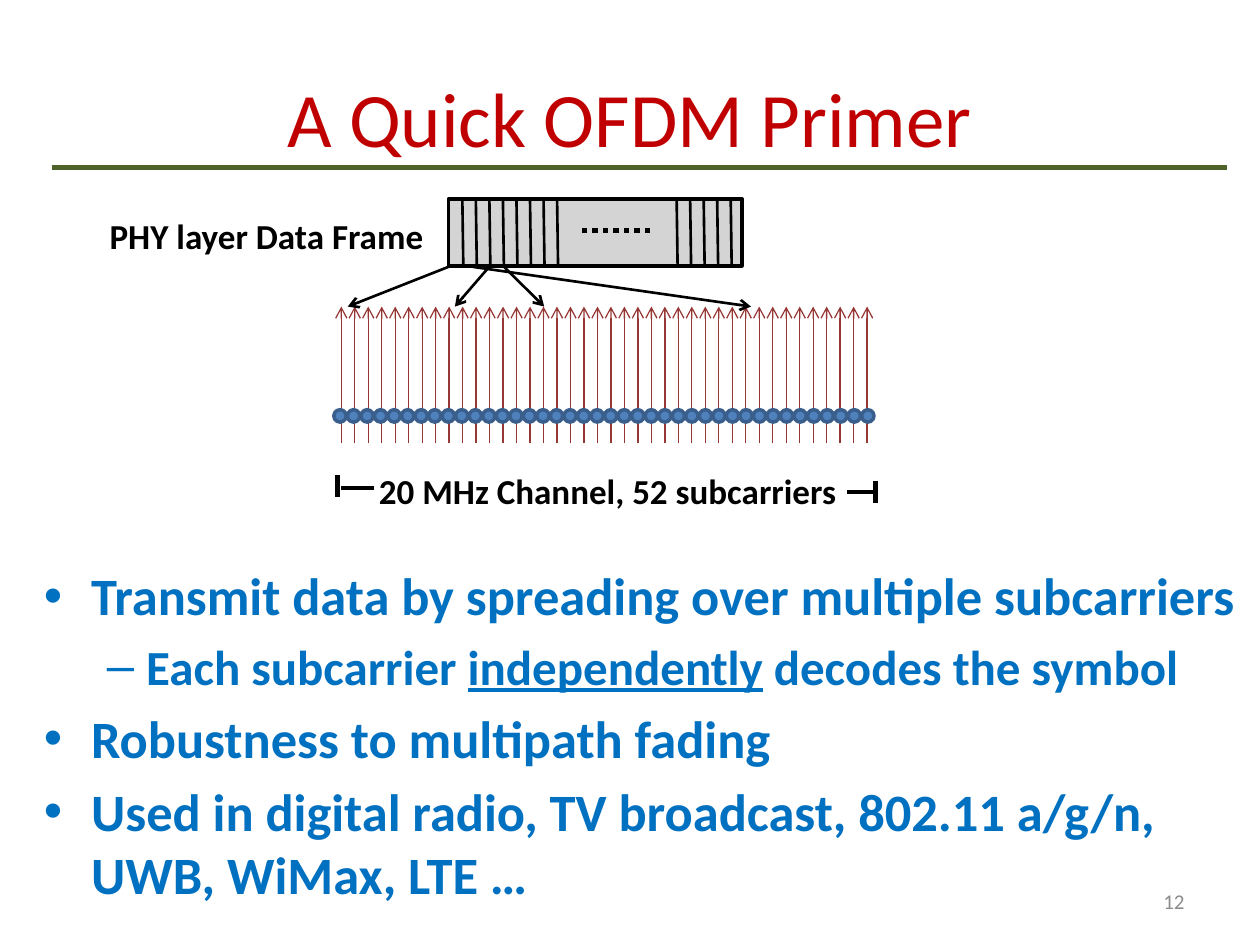
from lxml import etree
from pptx import Presentation
from pptx.dml.color import RGBColor
from pptx.enum.dml import MSO_LINE
from pptx.enum.shapes import MSO_CONNECTOR, MSO_SHAPE
from pptx.enum.text import MSO_ANCHOR, MSO_AUTO_SIZE, PP_ALIGN
from pptx.oxml.ns import qn
from pptx.util import Cm, Pt

STRAIGHT = MSO_CONNECTOR.STRAIGHT
RECTANGLE, OVAL = MSO_SHAPE.RECTANGLE, MSO_SHAPE.OVAL
DOTTED = MSO_LINE.ROUND_DOT
MIDDLE, NO_FIT = MSO_ANCHOR.MIDDLE, MSO_AUTO_SIZE.NONE
LEFT, CENTER, RIGHT = PP_ALIGN.LEFT, PP_ALIGN.CENTER, PP_ALIGN.RIGHT

BLACK = RGBColor(0x00, 0x00, 0x00)
RED = RGBColor(0xC0, 0x00, 0x00)
BLUE = RGBColor(0x00, 0x70, 0xC0)
OLIVE = RGBColor(0x4F, 0x62, 0x28)
MAROON = RGBColor(0x95, 0x37, 0x35)
DOT_FILL = RGBColor(0x4F, 0x81, 0xBD)
DOT_EDGE = RGBColor(0x3A, 0x5F, 0x8C)
SILVER = RGBColor(0xBF, 0xBF, 0xBF)
GRAY = RGBColor(0x8C, 0x8C, 0x8C)
FONT = "Calibri"

# Content; all positions are in centimetres
TITLE = "A Quick OFDM Primer"
TITLE_AREA = (1.27, 0.76, 22.86, 3.18)
BODY_AREA = (0.63, 11.23, 24.56, 6.99)
BULLETS = [  # level, size, spans of (text, underlined)
    (0, 30, [("Transmit data by spreading over multiple subcarriers", False)]),
    (1, 28, [("Each subcarrier ", False), ("independently", True),
             (" decodes the symbol", False)]),
    (0, 30, [("Robustness to multipath fading", False)]),
    (0, 30, [("Used in digital radio, TV broadcast, 802.11 a/g/n, "
              "UWB, WiMax, LTE …", False)]),
]
LABEL_STYLE = {"size": Pt(20), "bold": True}
LABELS = [  # text, area, font colour, alignment, format
    ("20 MHz Channel, 52 subcarriers", (7.39, 9.32, 10.77, 1.12), BLACK, LEFT, LABEL_STYLE),
    ("PHY layer Data Frame", (1.96, 4.19, 7.19, 1.12), BLACK, LEFT, LABEL_STYLE),
    ("12", (18.21, 17.65, 5.92, 1.02), GRAY, RIGHT, {"size": Pt(12)}),
]
TITLE_RULE = (1.04, 3.38, 24.74, 3.38)
CHANNEL_MARKS = [  # line, width
    ((17.07, 9.91, 17.63, 9.91), 2.25),
    ((6.88, 9.83, 7.54, 9.83), 2.25),
    ((17.65, 9.70, 17.65, 10.13), 3),
    ((6.81, 9.58, 6.81, 10.01), 3),
]
FRAME_AREA = (9.04, 4.01, 5.92, 1.35)
FRAME_TOP, FRAME_BOTTOM = 4.01, 5.38
SYMBOL_DIVIDERS = [(9.32, 11.23, 8), (13.64, 14.73, 5)]  # first, last, count
ELLIPSIS = (11.73, 4.65, 13.16, 4.65)
SUBCARRIERS = 40
CARRIER_FIRST, CARRIER_LAST = 6.88, 17.48
CARRIER_TOP, CARRIER_BOTTOM = 6.18, 8.94
DOT_FIRST, DOT_LAST = 6.73, 17.37
DOT_TOP, DOT_SIZE = 8.26, 0.25
SPREADING = [(9.04, 7.01), (9.53, 15.14), (9.86, 9.17), (10.16, 10.97)]  # start x, end x


def spaced(first, last, count):
    step = (last - first) / (count - 1)
    return [first + step * i for i in range(count)]


def place(shape, area):
    shape.left, shape.top, shape.width, shape.height = map(Cm, area)


def add_line(page, ends, color, width, arrow=False, dash=None):
    line = page.shapes.add_connector(STRAIGHT, *map(Cm, ends))
    line.line.color.rgb = color
    line.line.width = Pt(width)
    if dash:
        line.line.dash_style = dash
    if arrow:
        etree.SubElement(line.line._get_or_add_ln(), qn("a:tailEnd"), type="arrow")
    etree.SubElement(line._element.spPr, qn("a:effectLst"))


def add_filled(page, kind, area, fill, edge):
    shape = page.shapes.add_shape(kind, *map(Cm, area))
    shape.shadow.inherit = False
    shape.fill.solid()
    shape.fill.fore_color.rgb = fill
    shape.line.color.rgb = edge
    shape.line.width = Pt(2)
    return shape


def add_span(para, text, color, style):
    span = para.add_run()
    span.text = text
    span.font.name = FONT
    span.font.color.rgb = color
    for name, value in style.items():
        setattr(span.font, name, value)


def add_label(page, text, area, color, align, style):
    box = page.shapes.add_textbox(*map(Cm, area))
    box.text_frame.word_wrap = True
    box.text_frame.vertical_anchor = MIDDLE
    para = box.text_frame.paragraphs[0]
    para.alignment = align
    add_span(para, text, color, style)


def fill_placeholders(page):
    title, body = page.placeholders
    place(title, TITLE_AREA)
    title.text_frame.auto_size = NO_FIT
    title.text_frame.vertical_anchor = MIDDLE
    heading = title.text_frame.paragraphs[0]
    heading.alignment = CENTER
    add_span(heading, TITLE, RED, {"size": Pt(44)})

    place(body, BODY_AREA)
    body.text_frame.auto_size = NO_FIT
    for i, (level, size, spans) in enumerate(BULLETS):
        para = body.text_frame.add_paragraph() if i else body.text_frame.paragraphs[0]
        para.level = level
        for text, underlined in spans:
            add_span(para, text, BLUE,
                     {"size": Pt(size), "bold": True, "underline": underlined})


def draw_data_frame(page):
    frame = add_filled(page, RECTANGLE, FRAME_AREA, SILVER, BLACK)
    shade = frame._element.spPr.find(qn("a:solidFill"))[0]
    etree.SubElement(shade, qn("a:alpha"), val="67000")
    for group in SYMBOL_DIVIDERS:
        for x in spaced(*group):
            add_line(page, (x, FRAME_TOP, x + 0.02, FRAME_BOTTOM), BLACK, 1.5)
    add_line(page, ELLIPSIS, BLACK, 3, dash=DOTTED)


def draw_subcarriers(page):
    for x in spaced(CARRIER_FIRST, CARRIER_LAST, SUBCARRIERS):
        add_line(page, (x, CARRIER_BOTTOM, x, CARRIER_TOP), MAROON, 0.75, arrow=True)
    for x in spaced(DOT_FIRST, DOT_LAST, SUBCARRIERS):
        add_filled(page, OVAL, (x, DOT_TOP, DOT_SIZE, DOT_SIZE), DOT_FILL, DOT_EDGE)
    for start, end in SPREADING:
        add_line(page, (start, FRAME_BOTTOM, end, CARRIER_TOP), BLACK, 1.5, arrow=True)


def main():
    deck = Presentation()
    deck.slide_width, deck.slide_height = Cm(25.4), Cm(19.05)
    page = deck.slides.add_slide(deck.slide_layouts[1])
    fill_placeholders(page)
    add_line(page, TITLE_RULE, OLIVE, 3)
    for ends, width in CHANNEL_MARKS:
        add_line(page, ends, BLACK, width)
    draw_data_frame(page)
    draw_subcarriers(page)
    for label in LABELS:
        add_label(page, *label)
    deck.save("out.pptx")


if __name__ == "__main__":
    main()
